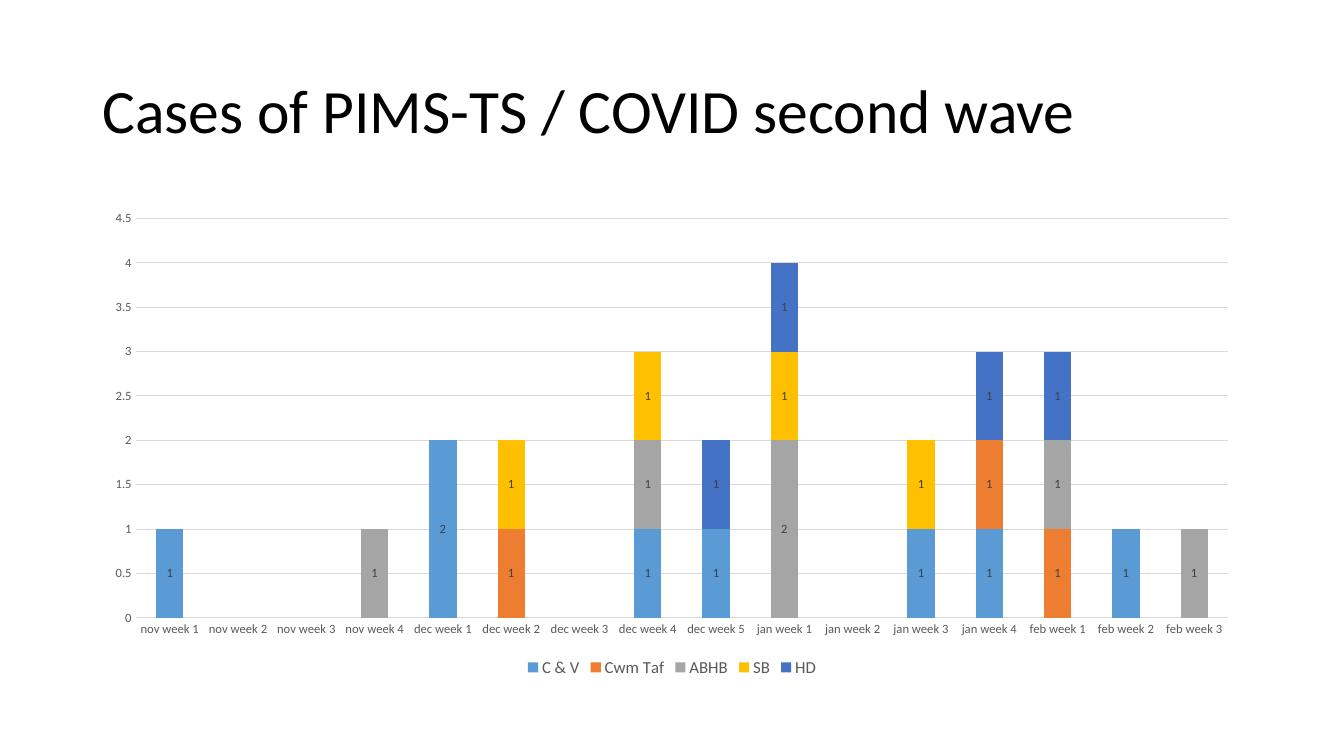
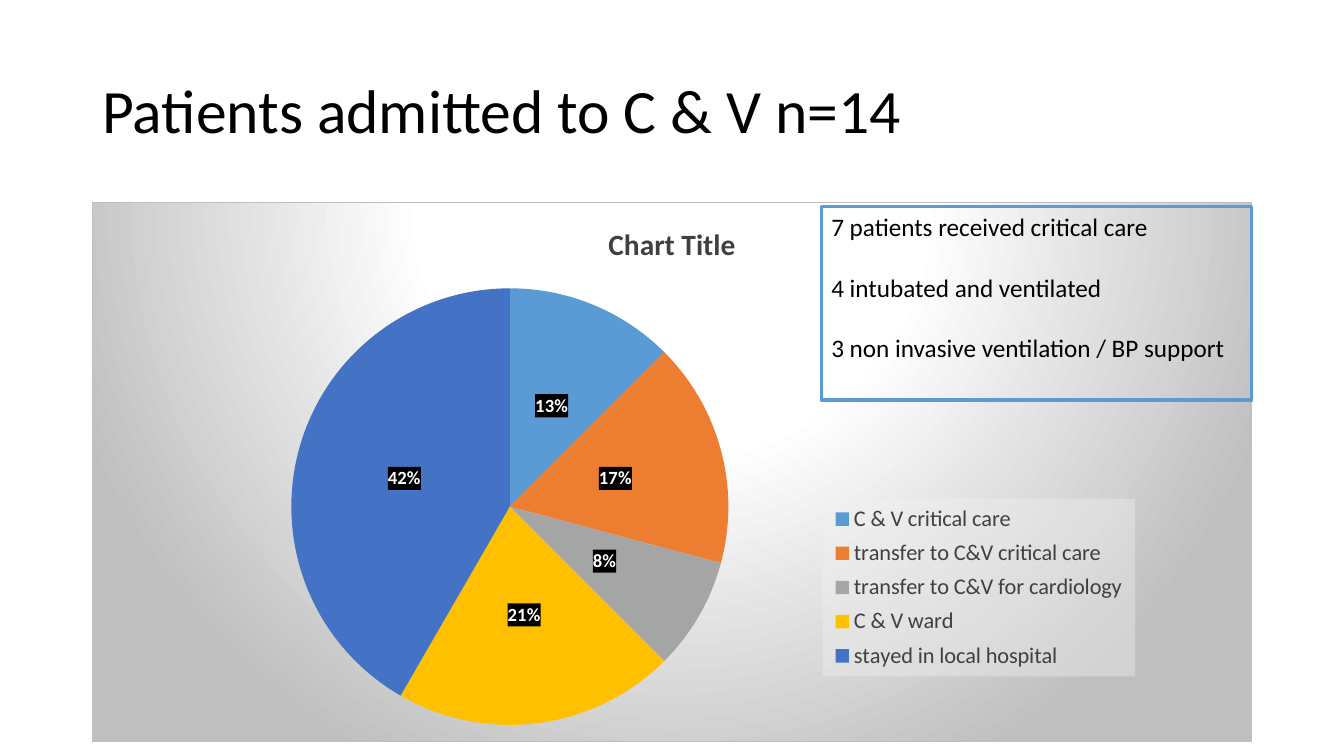
from lxml.etree import SubElement
from pptx import Presentation
from pptx.chart.data import CategoryChartData
from pptx.dml.color import RGBColor
from pptx.enum.chart import XL_CHART_TYPE, XL_LABEL_POSITION, XL_LEGEND_POSITION, XL_TICK_MARK
from pptx.enum.text import MSO_ANCHOR
from pptx.oxml import parse_xml
from pptx.oxml.ns import nsdecls, qn
from pptx.util import Cm, Pt

FONT = "Calibri"
COLORS = {
    "text": "000000", "axis": "595959", "label": "404040", "grid": "D9D9D9",
    "white": "FFFFFF", "edge": "BFBFBF", "pale": "F2F2F2",
    "blue": "5B9BD5", "orange": "ED7D31", "gray": "A5A5A5",
    "yellow": "FFC000", "navy": "4472C4",
}
PALETTE = ["blue", "orange", "gray", "yellow", "navy"]
LEFT, WIDTH, CHART_TOP = 2.33, 29.21, 5.08

MONTHS = {"nov": 4, "dec": 5, "jan": 4, "feb": 3}
WEEKS = [f"{month} week {n}" for month, count in MONTHS.items() for n in range(1, count + 1)]
CASES = {
    "C & V": {"nov week 1": 1, "dec week 1": 2, "dec week 4": 1, "dec week 5": 1,
              "jan week 3": 1, "jan week 4": 1, "feb week 2": 1},
    "Cwm Taf": {"dec week 2": 1, "jan week 4": 1, "feb week 1": 1},
    "ABHB": {"nov week 4": 1, "dec week 4": 1, "jan week 1": 2, "feb week 1": 1,
             "feb week 3": 1},
    "SB": {"dec week 2": 1, "dec week 4": 1, "jan week 1": 1, "jan week 3": 1},
    "HD": {"dec week 5": 1, "jan week 1": 1, "jan week 4": 1, "feb week 1": 1},
}
ADMISSIONS = {
    "C & V critical care": 3,
    "transfer to C&V critical care": 4,
    "transfer to C&V for cardiology": 2,
    "C & V ward": 5,
    "stayed in local hospital": 10,
}
CARE_NOTES = [
    "7 patients received critical care",
    "4 intubated and ventilated",
    "3 non invasive ventilation / BP support",
]


def rgb(name):
    return RGBColor.from_string(COLORS[name])


def set_font(font, size, color, bold=False):
    font.name = FONT
    font.size = Pt(size)
    font.bold = bold
    font.color.rgb = rgb(color)


def set_fill(fill, color):
    fill.solid()
    fill.fore_color.rgb = rgb(color)


def set_line(line, color, width):
    line.color.rgb = rgb(color)
    line.width = Pt(width)


def add_text(slide, paragraphs, box, size=18, color="text", anchor=MSO_ANCHOR.TOP,
             line_spacing=None, gap=0):
    sp = slide.shapes.add_textbox(*map(Cm, box))
    tf = sp.text_frame
    tf.word_wrap = True
    tf.vertical_anchor = anchor
    for i, text in enumerate(paragraphs):
        p = tf.add_paragraph() if i else tf.paragraphs[0]
        p.line_spacing = line_spacing
        p.space_before = Pt(gap if i else 0)
        r = p.add_run()
        r.text = text
        set_font(r.font, size, color)
    return sp


def add_titled_slide(prs, title):
    slide = prs.slides.add_slide(prs.slide_layouts[6])
    add_text(slide, [title], (LEFT, 1.01, WIDTH, 3.68), size=44,
             anchor=MSO_ANCHOR.MIDDLE, line_spacing=0.9)
    return slide


def add_chart(slide, kind, categories, series, height, legend_at, legend_size, legend_color):
    data = CategoryChartData()
    data.categories = categories
    for name, values in series.items():
        data.add_series(name, values)
    box = map(Cm, (LEFT, CHART_TOP, WIDTH, height))
    chart = slide.shapes.add_chart(kind, *box, data).chart
    set_font(chart.font, 10, "text")
    chart.has_title = False
    chart.has_legend = True
    chart.legend.position = legend_at
    chart.legend.include_in_layout = False
    set_font(chart.legend.font, legend_size, legend_color)
    return chart


def add_labels(series, size, color, bold=False):
    labels = series.data_labels
    labels.position = XL_LABEL_POSITION.CENTER
    set_font(labels.font, size, color, bold)
    return labels


def style_axis(axis):
    axis.major_tick_mark = axis.minor_tick_mark = XL_TICK_MARK.NONE
    set_font(axis.tick_labels.font, 9, "axis")


def set_layout(parent, position, inner=False):
    layout = parent.find(qn("c:layout"))
    if layout is None:
        layout = parse_xml(f"<c:layout {nsdecls('c')}/>")
        before = parent.find(qn("c:legendPos"))
        if before is None:
            parent.insert(0, layout)
        else:
            before.addnext(layout)
    manual = SubElement(layout, qn("c:manualLayout"))
    entries = [("layoutTarget", "inner")] if inner else []
    entries += [("xMode", "edge"), ("yMode", "edge"), *zip("xywh", position)]
    for tag, value in entries:
        SubElement(manual, qn(f"c:{tag}")).set("val", str(value))


def translucent_fill(color, alpha):
    return parse_xml(
        f"<c:spPr {nsdecls('c', 'a')}><a:solidFill><a:srgbClr val='{COLORS[color]}'>"
        f"<a:alpha val='{alpha * 1000}'/></a:srgbClr></a:solidFill></c:spPr>")


def add_radial_background(chart):
    stops = "".join(
        f"<a:gs pos='{pos * 1000}'><a:srgbClr val='{COLORS[color]}'/></a:gs>"
        for pos, color in [(0, "white"), (39, "white"), (100, "edge")])
    area = chart._chartSpace.find(qn("c:chart"))
    area.addprevious(parse_xml(f"<c:roundedCorners {nsdecls('c')} val='0'/>"))
    area.addnext(parse_xml(
        f"<c:spPr {nsdecls('c', 'a')}><a:gradFill><a:gsLst>{stops}</a:gsLst>"
        "<a:path path='circle'><a:fillToRect l='50000' t='-80000' r='50000' b='180000'/>"
        f"</a:path></a:gradFill><a:ln w='{Pt(0.75)}'><a:solidFill>"
        f"<a:srgbClr val='{COLORS['edge']}'/></a:solidFill></a:ln></c:spPr>"))


def add_cases_chart(slide):
    series = {name: [cases.get(week) for week in WEEKS] for name, cases in CASES.items()}
    chart = add_chart(slide, XL_CHART_TYPE.COLUMN_STACKED, WEEKS, series, 12.09,
                      XL_LEGEND_POSITION.BOTTOM, 12, "axis")
    plot = chart.plots[0]
    plot.gap_width = 150
    plot.overlap = 100
    plot.vary_by_categories = False
    for bars, color in zip(plot.series, PALETTE):
        set_fill(bars.format.fill, color)
        add_labels(bars, 9, "label").show_value = True
    style_axis(chart.category_axis)
    set_line(chart.category_axis.format.line, "grid", 0.75)
    values = chart.value_axis
    style_axis(values)
    values.minimum_scale, values.maximum_scale, values.major_unit = 0, 4.5, 0.5
    values.format.line.fill.background()
    set_line(values.major_gridlines.format.line, "grid", 0.75)


def add_admissions_chart(slide):
    chart = add_chart(slide, XL_CHART_TYPE.PIE, list(ADMISSIONS),
                      {"Series 1": list(ADMISSIONS.values())}, 13.61,
                      XL_LEGEND_POSITION.RIGHT, 16, "label")
    add_radial_background(chart)
    chart.has_title = True
    tf = chart.chart_title.text_frame
    tf.text = "Chart Title"
    set_font(tf.paragraphs[0].runs[0].font, 21, "label", bold=True)
    plot = chart.plots[0]
    plot.vary_by_categories = True
    pie = plot.series[0]
    for i, color in enumerate(PALETTE):
        set_fill(pie.points[i].format.fill, color)
    labels = add_labels(pie, 13.3, "white", bold=True)
    labels.show_percentage = True
    labels.show_value = False
    labels.number_format = "0%"
    labels.number_format_is_linked = False
    labels._element.find(qn("c:txPr")).addprevious(translucent_fill("text", 75))
    legend = chart.legend._element
    legend.find(qn("c:txPr")).addprevious(translucent_fill("pale", 39))
    set_layout(legend, (0.63, 0.55, 0.27, 0.33))
    set_layout(chart._chartSpace.chart.plotArea, (0.17, 0.16, 0.38, 0.81), inner=True)


def main():
    prs = Presentation()
    prs.slide_width, prs.slide_height = Cm(33.87), Cm(19.05)

    add_cases_chart(add_titled_slide(prs, "Cases of PIMS-TS / COVID second wave"))

    slide = add_titled_slide(prs, "Patients admitted to C & V n=14")
    add_admissions_chart(slide)
    notes = add_text(slide, CARE_NOTES, (20.7, 5.21, 10.85, 4.87), gap=21.5)
    set_line(notes.line, "blue", 2.25)

    prs.save("out.pptx")


if __name__ == "__main__":
    main()
